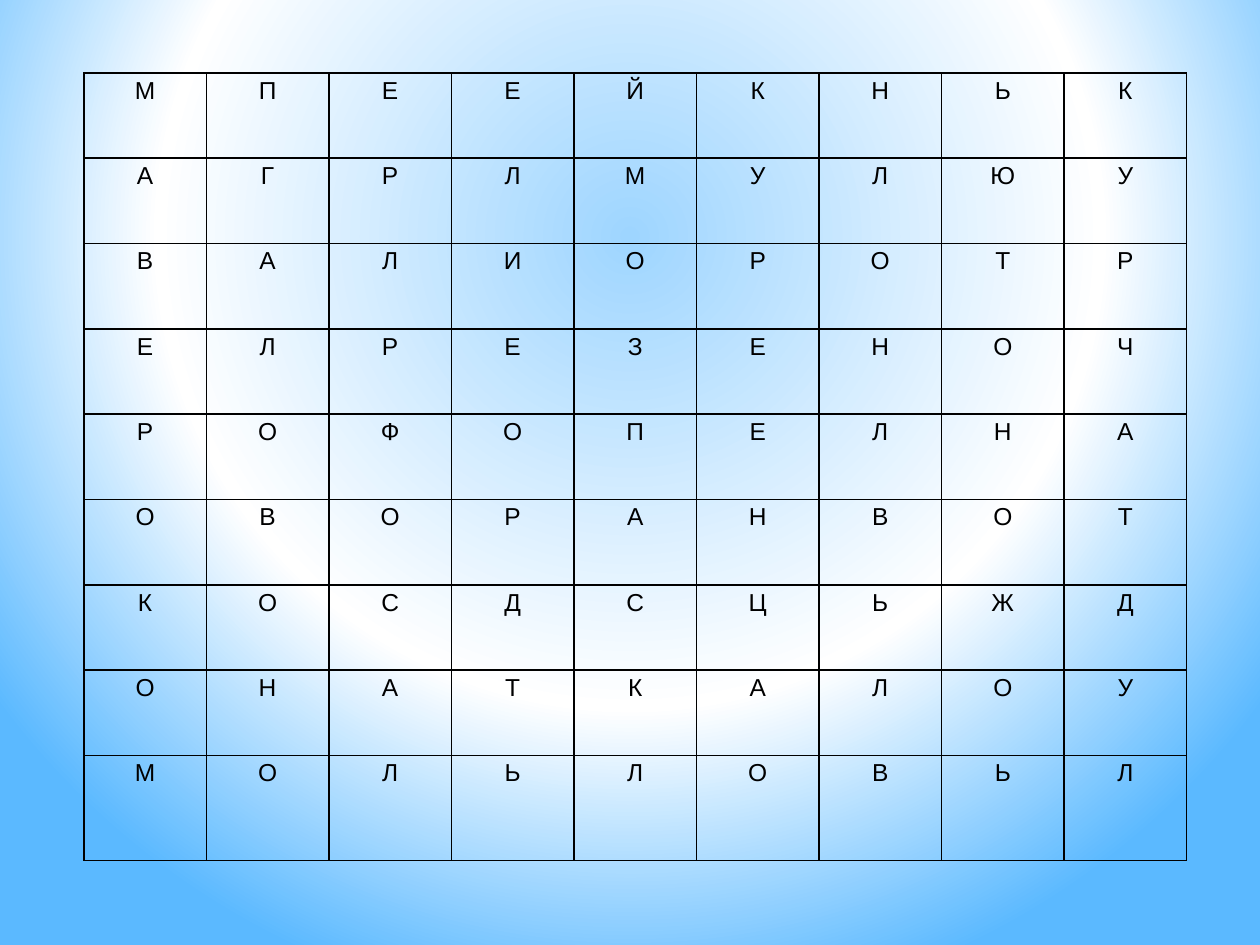
from lxml import etree
from pptx import Presentation
from pptx import util as u
from pptx.dml.color import RGBColor
from pptx.enum import text
from pptx.oxml.ns import qn

COLORS = {"ink": "000000", "center": "9ED5FF", "ring": "FFFFFF", "edge": "5BB9FF"}

LETTER_ROWS = [
    "МПЕЕЙКНЬК",
    "АГРЛМУЛЮУ",
    "ВАЛИОРОТР",
    "ЕЛРЕЗЕНОЧ",
    "РОФОПЕЛНА",
    "ОВОРАНВОТ",
    "КОСДСЦЬЖД",
    "ОНАТКАЛОУ",
    "МОЛЬЛОВЬЛ",
]
COLUMN_WIDTH = u.Cm(2.47)
ROW_HEIGHT = u.Cm(1.72)
LAST_ROW_HEIGHT = u.Cm(2.12)


def add_solid_color(parent, color):
    solid = etree.SubElement(parent, qn("a:solidFill"))
    etree.SubElement(solid, qn("a:srgbClr"), val=COLORS[color])


class WordSearch:
    font = "Arial"
    size = u.Pt(14)
    border = u.Pt(1)

    def __init__(self, slide):
        self.slide = slide

    def radial_background(self, stops, focus):
        """Stops are (percent, colour); focus maps rectangle sides to percents."""
        self.slide.background.fill.gradient()
        gradient = next(self.slide.element.iter(qn("a:gradFill")))
        for child in list(gradient):
            gradient.remove(child)
        stop_list = etree.SubElement(gradient, qn("a:gsLst"))
        for percent, color in stops:
            stop = etree.SubElement(stop_list, qn("a:gs"), pos=str(percent * 1000))
            etree.SubElement(stop, qn("a:srgbClr"), val=COLORS[color])
        circle = etree.SubElement(gradient, qn("a:path"), {"path": "circle"})
        sides = {side: str(percent * 1000) for side, percent in focus.items()}
        etree.SubElement(circle, qn("a:fillToRect"), sides)

    def letter_cell(self, cell, letter):
        properties = cell._tc.get_or_add_tcPr()
        for side in ("L", "R", "T", "B"):
            line = etree.SubElement(properties, qn(f"a:ln{side}"), w=str(self.border))
            add_solid_color(line, "ink")
        cell.fill.background()
        cell.margin_left = cell.margin_right = u.Cm(0.18)
        cell.margin_top = cell.margin_bottom = 0
        paragraph = cell.text_frame.paragraphs[0]
        paragraph.alignment = text.PP_ALIGN.CENTER
        paragraph.line_spacing = 1.15
        run = paragraph.add_run()
        run.text = letter
        run.font.name = self.font
        run.font.size = self.size
        run.font.bold = False
        run.font.color.rgb = RGBColor.from_string(COLORS["ink"])

    def letter_grid(self, left, top, letter_rows):
        row_count, column_count = len(letter_rows), len(letter_rows[0])
        height = ROW_HEIGHT * (row_count - 1) + LAST_ROW_HEIGHT
        grid = self.slide.shapes.add_table(
            row_count, column_count, left, top, COLUMN_WIDTH * column_count, height
        ).table
        grid.first_row = grid.horz_banding = False
        for column in grid.columns:
            column.width = COLUMN_WIDTH
        for row, letters in zip(grid.rows, letter_rows):
            row.height = ROW_HEIGHT
            for cell, letter in zip(row.cells, letters):
                self.letter_cell(cell, letter)
        grid.rows[row_count - 1].height = LAST_ROW_HEIGHT


def main():
    deck = Presentation()
    deck.slide_width, deck.slide_height = u.Cm(25.4), u.Cm(19.05)
    puzzle = WordSearch(deck.slides.add_slide(deck.slide_layouts[6]))
    puzzle.radial_background(
        [(0, "center"), (60, "ring"), (100, "edge")],
        {"l": 20, "t": 10, "r": 20, "b": 60},
    )
    puzzle.letter_grid(u.Cm(1.69), u.Cm(1.47), LETTER_ROWS)
    deck.save("out.pptx")


if __name__ == "__main__":
    main()
